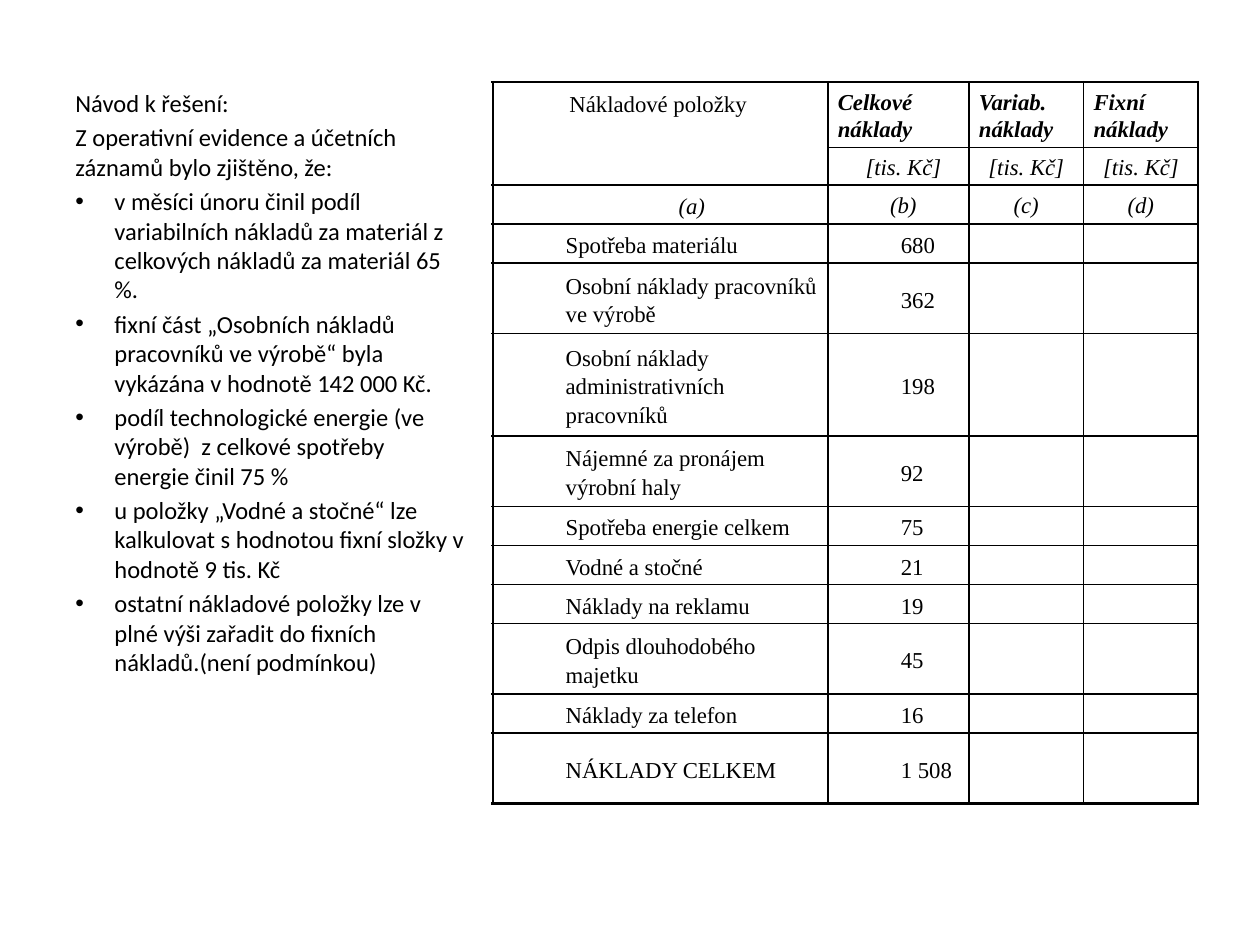
"""Build a slide with solution hints beside a table of cost items."""
import pptx
import pptx.util
import pptx.oxml
import pptx.oxml.ns
import pptx.dml.color
import pptx.enum.text
import lxml.etree

HUES = {"ink": "000000"}
INK = pptx.dml.color.RGBColor.from_string(HUES["ink"])
Pt = pptx.util.Pt
ALIGN = pptx.enum.text.PP_ALIGN
MID = pptx.enum.text.MSO_ANCHOR.MIDDLE

deck = pptx.Presentation()
deck.slide_width = pptx.util.Inches(10)
deck.slide_height = pptx.util.Inches(7.5)
unit = deck.slide_width // 100
slide = deck.slides.add_slide(deck.slide_layouts[6])


def style(para, face, size):
    para.font.name = face
    para.font.size = Pt(size)
    para.font.color.rgb = INK


def indent(para, left, first):
    props = para._p.get_or_add_pPr()
    props.set("marL", str(int(left * unit)))
    props.set("indent", str(int(first * unit)))
    return props


hints = [
    "Návod k řešení:",
    "Z operativní evidence a účetních záznamů bylo zjištěno, že:",
    "v měsíci únoru činil podíl variabilních nákladů za materiál z celkových nákladů za materiál 65 %.",
    "fixní část „Osobních nákladů pracovníků ve výrobě“ byla vykázána v hodnotě 142 000 Kč.",
    "podíl technologické energie (ve výrobě)  z celkové spotřeby energie činil 75 %",
    "u položky „Vodné a stočné“ lze kalkulovat s hodnotou fixní složky v hodnotě 9 tis. Kč",
    "ostatní nákladové položky lze v plné výši zařadit do fixních nákladů.(není podmínkou)",
]
box = slide.shapes.add_textbox(5 * unit, 6.5 * unit, 32.9 * unit, 60.5 * unit)
frame = box.text_frame
frame.word_wrap = True
for num, hint in enumerate(hints):
    para = frame.add_paragraph() if num else frame.paragraphs[0]
    para.text = hint
    if num > 1:
        props = indent(para, 3.1, -3.1)
        font = lxml.etree.SubElement(props, pptx.oxml.ns.qn("a:buFont"))
        font.set("typeface", "Arial")
        mark = lxml.etree.SubElement(props, pptx.oxml.ns.qn("a:buChar"))
        mark.set("char", "•")
    para.space_before = Pt(2.8)
    style(para, "Calibri", 14)

costs = [
    ("Spotřeba materiálu", "680"),
    ("Osobní náklady pracovníků ve výrobě", "362"),
    ("Osobní náklady administrativních pracovníků", "198"),
    ("Nájemné za pronájem výrobní haly", "92"),
    ("Spotřeba energie celkem", "75"),
    ("Vodné a stočné", "21"),
    ("Náklady na reklamu", "19"),
    ("Odpis dlouhodobého majetku", "45"),
    ("Náklady za telefon", "16"),
    ("NÁKLADY CELKEM", "1 508"),
]
rows = [
    ("Nákladové položky", "Celkové náklady", "Variab.\vnáklady", "Fixní\vnáklady"),
    ("", "[tis. Kč]", "[tis. Kč]", "[tis. Kč]"),
    ("(a)", "(b)", "(c)", "(d)"),
] + [cost + ("", "") for cost in costs]
wide = [26.6, 11.2, 9.1, 9.1]
one, two, three = 3.1, 5.6, 8.1
tall = [5.2, 2.9, one, one, two, three, two, one, one, one, two, one, two]

grid = slide.shapes.add_table(len(rows), len(wide), int(39.1 * unit), int(6.5 * unit),
                              int(sum(wide) * unit), int(sum(tall) * unit)).table
grid.first_row = grid.horz_banding = False
for col, span in zip(grid.columns, wide):
    col.width = int(span * unit)
for row, span in zip(grid.rows, tall):
    row.height = int(span * unit)

last = len(rows) - 1
for r, texts in enumerate(rows):
    for c, text in enumerate(texts):
        cell = grid.cell(r, c)
        title = r == c == 0
        cell.margin_left = cell.margin_right = int((1.1 if title else 0.8) * unit)
        cell.margin_top = int((0.5 if title else 0.1) * unit)
        cell.margin_bottom = 0
        if not title:
            cell.vertical_anchor = MID
        para = cell.text_frame.paragraphs[0]
        para.text = text
        para.line_spacing = 1.15 if c == 0 or r > 2 else 1.07
        if c == 0 or r > 2:
            indent(para, 5, 0)
        elif c == 1 and r:
            indent(para, 0, 0.8)
        if r in (1, 2):
            para.alignment = ALIGN.CENTER
        style(para, "Times New Roman", 13)
        para.font.bold = r == 0 and c > 0
        para.font.italic = r < 3 and not title

        thick = {"L": c == 0, "R": c == 3, "T": r in (0, 3), "B": r in (2, last)}
        for side, bold in thick.items():
            cell._tc.get_or_add_tcPr().append(pptx.oxml.parse_xml(
                f'<a:ln{side} {pptx.oxml.ns.nsdecls("a")} w="{Pt(1.5 if bold else 1)}">'
                f'<a:solidFill><a:srgbClr val="{HUES["ink"]}"/></a:solidFill></a:ln{side}>'))
        cell.fill.background()
grid.cell(0, 0).merge(grid.cell(1, 0))

deck.save("out.pptx")
